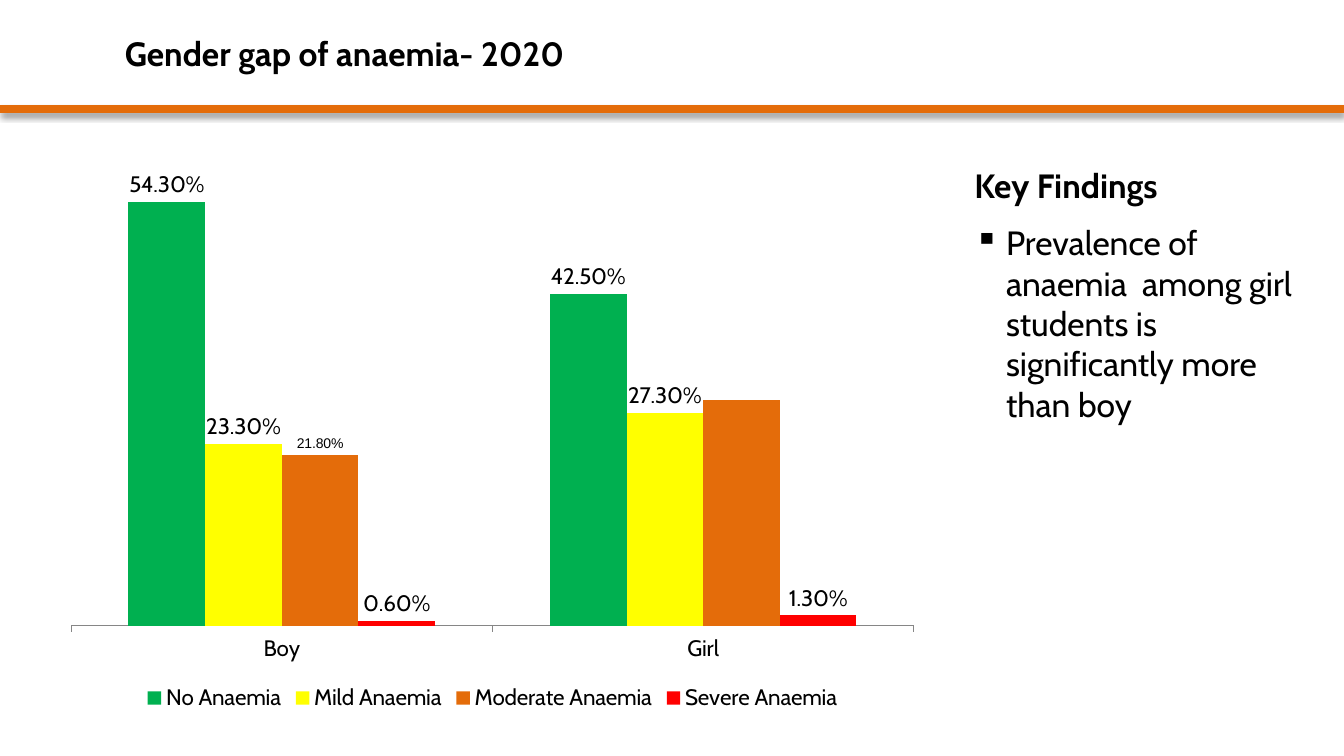
from lxml import etree
from pptx import Presentation
from pptx.chart.data import CategoryChartData
from pptx.dml.color import RGBColor
from pptx.enum import chart as ch, shapes, text as tx
from pptx.oxml import ns
from pptx.util import Pt

FONT = "Cabin"
BLACK, ORANGE = "000000", "E46C0A"
WIDTH, HEIGHT = 960, 540

TITLE = "Gender gap of anaemia- 2020"
FINDINGS_HEADING = "Key Findings"
FINDINGS = ["Prevalence of anaemia  among girl students is significantly more than boy"]

PERCENT = "0.00%"
GENDERS = ["Boy", "Girl"]
# name, values, colour, whether every bar is labelled
SEVERITIES = [
    ("No Anaemia", (0.543, 0.425), "00B050", True),
    ("Mild Anaemia", (0.233, 0.273), "FFFF00", True),
    ("Moderate Anaemia", (0.218, 0.289), ORANGE, False),
    ("Severe Anaemia", (0.006, 0.013), "FF0000", True),
]

TITLE_BOX = (82.1, 7.9, 789.8, 59.8)
FINDINGS_BOX = (689, 114.5, 246.2, 232.6)
CHART_BOX = (38.2, 104.4, 627.1, 406.8)
RULE_Y = 77.8


def colour(value):
    return RGBColor.from_string(value)


def sub(parent, tag, **attributes):
    return etree.SubElement(parent, ns.qn(tag), attributes)


def set_font(font, size, name=FONT, bold=False):
    font.name, font.size, font.bold = name, Pt(size), bold
    font.color.rgb = colour(BLACK)


def add_box(slide, box, anchor=tx.MSO_ANCHOR.TOP):
    frame = slide.shapes.add_textbox(*map(Pt, box)).text_frame
    frame.word_wrap = True
    frame.vertical_anchor = anchor
    return frame


def write(paragraph, content, size=24, bold=False, before=0, after=0, bullet=None):
    if bullet:
        properties = paragraph._p.get_or_add_pPr()
        properties.set("marL", str(Pt(22.5)))
        properties.set("indent", str(-Pt(22.5)))
    paragraph.space_before, paragraph.space_after = Pt(before), Pt(after)
    if bullet:
        sub(properties, "a:buChar", char=bullet)
    run = paragraph.add_run()
    run.text = content
    set_font(run.font, size, bold=bold)


def add_rule(slide):
    rule = slide.shapes.add_connector(
        shapes.MSO_CONNECTOR.STRAIGHT, 0, Pt(RULE_Y), Pt(WIDTH), Pt(RULE_Y))
    rule.line.color.rgb = colour(ORANGE)
    rule.line.width = Pt(6)
    effects = sub(rule._element.spPr, "a:effectLst")
    shadow = sub(effects, "a:outerShdw", blurRad=str(Pt(4)), dist=str(Pt(3)),
                 dir="5400000", rotWithShape="0")
    sub(sub(shadow, "a:srgbClr", val=BLACK), "a:alpha", val="40000")


def add_severity_chart(slide):
    data = CategoryChartData(number_format=PERCENT)
    data.categories = GENDERS
    for name, values, _, _ in SEVERITIES:
        data.add_series(name, values)
    chart = slide.shapes.add_chart(
        ch.XL_CHART_TYPE.COLUMN_CLUSTERED, *map(Pt, CHART_BOX), data).chart
    set_font(chart.font, 16)
    chart.has_title = False
    chart.has_legend = True
    chart.legend.position = ch.XL_LEGEND_POSITION.BOTTOM
    chart.legend.include_in_layout = False

    chart.category_axis.major_tick_mark = ch.XL_TICK_MARK.OUTSIDE
    chart.category_axis.format.line.color.rgb = colour("868686")
    chart.category_axis.format.line.width = Pt(0.75)
    percent_axis = chart.value_axis
    percent_axis.visible = False
    percent_axis.has_major_gridlines = False
    percent_axis.minimum_scale, percent_axis.maximum_scale = 0, 0.6

    plot = chart.plots[0]
    plot.vary_by_categories = False
    plot.gap_width, plot.overlap = 150, 0
    for series, (_, _, fill, labelled) in zip(plot.series, SEVERITIES):
        series.format.fill.solid()
        series.format.fill.fore_color.rgb = colour(fill)
        series.invert_if_negative = False
        labels = series.data_labels
        labels.show_value = labelled
        if labelled:
            labels.number_format = PERCENT
            labels.number_format_is_linked = False
            labels.position = ch.XL_LABEL_POSITION.OUTSIDE_END
            set_font(labels.font, 16)
        else:
            boy_label = series.points[0].data_label
            set_font(boy_label.font, 10, name="Arial")
            boy_label.position = ch.XL_LABEL_POSITION.OUTSIDE_END


def main():
    presentation = Presentation()
    presentation.slide_width, presentation.slide_height = Pt(WIDTH), Pt(HEIGHT)
    slide = presentation.slides.add_slide(presentation.slide_layouts[6])

    add_rule(slide)
    findings = add_box(slide, FINDINGS_BOX)
    write(findings.paragraphs[0], FINDINGS_HEADING, bold=True, after=6)
    for finding in FINDINGS:
        write(findings.add_paragraph(), finding, before=6, after=6, bullet="▪")
    title = add_box(slide, TITLE_BOX, anchor=tx.MSO_ANCHOR.MIDDLE)
    write(title.paragraphs[0], TITLE, bold=True)
    add_severity_chart(slide)

    presentation.save("out.pptx")


if __name__ == "__main__":
    main()
